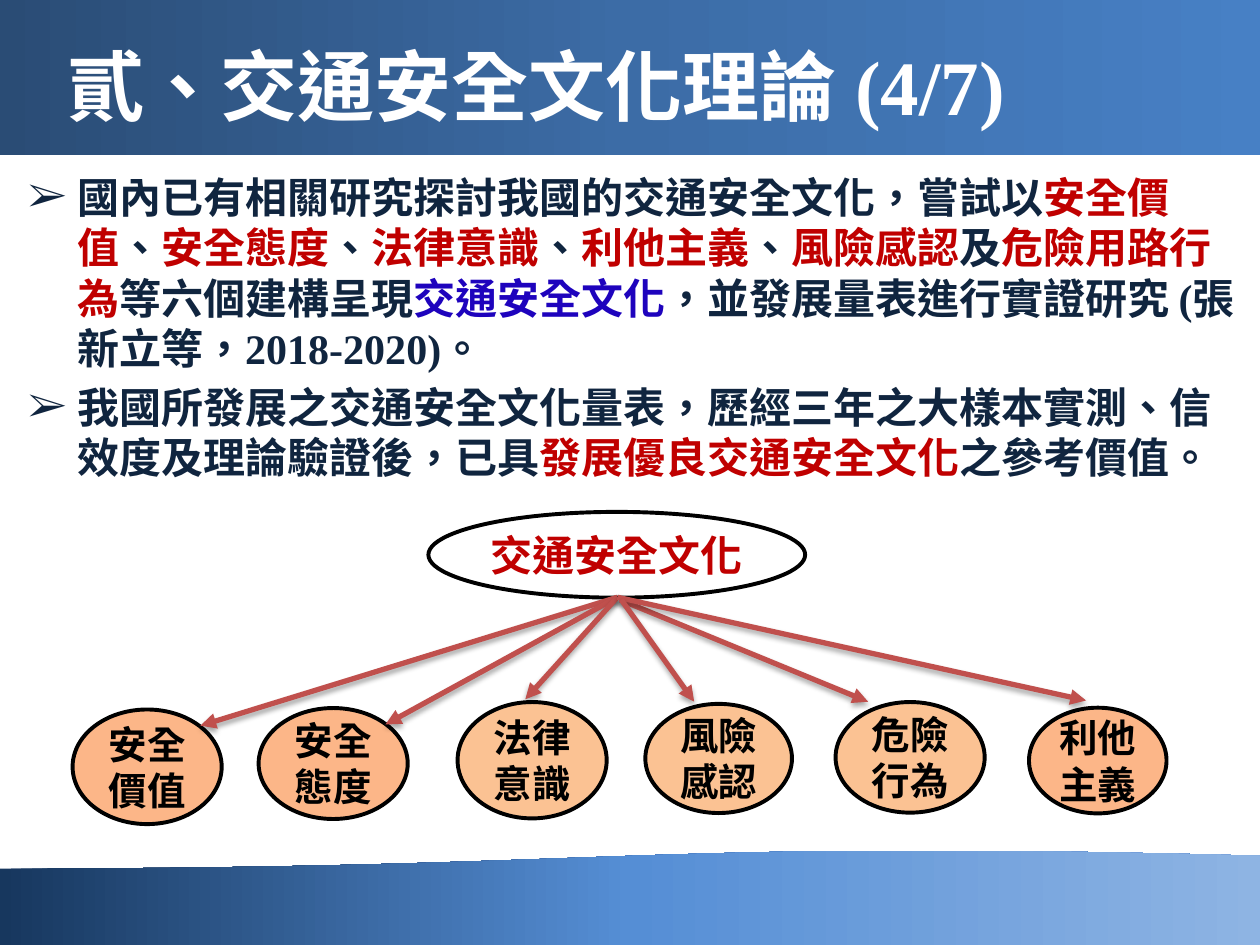
from typing import NamedTuple

from lxml.etree import SubElement
from pptx import Presentation
from pptx.dml.color import RGBColor
from pptx.enum.shapes import MSO_CONNECTOR, MSO_SHAPE
from pptx.enum.text import MSO_ANCHOR, PP_ALIGN
from pptx.oxml import parse_xml
from pptx.oxml.ns import nsdecls, qn
from pptx.util import Pt

FONT = "Times New Roman"
NAVY, RED, BLUE = "10253F", "C00000", "1E03BD"
PEACH, SAND = "FCB688", "FBC293"


class Oval(NamedTuple):
    """An ellipse with its place, label and look."""
    text: str
    left: float
    top: float
    width: float
    height: float
    fill: str
    size: float = 22
    color: str = "000000"


class Arrow(NamedTuple):
    """An arrow from the main idea to one factor."""
    x: float
    y: float
    to_x: float
    to_y: float


class Part(NamedTuple):
    """A stretch of text in one colour."""
    text: str
    color: str = NAVY


ROOT = Oval("交通安全文化", 244.8, 292.5, 215.3, 49, "FFFFFF", 24, RED)
FACTORS = [
    Oval("安全價值", 41.5, 405.4, 85.2, 65.5, PEACH),
    Oval("安全態度", 147.8, 404.6, 85.2, 63.4, PEACH),
    Oval("法律意識", 261.5, 401.2, 85.2, 66.5, SAND),
    Oval("風險感認", 368.8, 402.2, 83.8, 62.4, SAND),
    Oval("危險行為", 477.5, 401.2, 85.2, 63.2, SAND),
    Oval("利他主義", 588, 404.4, 78.6, 60.4, PEACH),
]
ARROWS = [
    Arrow(352.8, 341.3, 114.5, 414.7),
    Arrow(352.8, 341.3, 220.3, 414),
    Arrow(352.8, 341.3, 300.2, 399.6),
    Arrow(354.2, 342.7, 496.1, 401),
    Arrow(352.8, 341.3, 620.6, 400.3),
    Arrow(355, 342.7, 396.7, 401),
]
POINTS = [
    [
        Part("國內已有相關研究探討我國的交通安全文化，嘗試以"),
        Part("安全價值", RED), Part("、"),
        Part("安全態度", RED), Part("、"),
        Part("法律意識", RED), Part("、"),
        Part("利他主義", RED), Part("、"),
        Part("風險感認", RED), Part("及"),
        Part("危險用路行為", RED), Part("等六個建構呈現"),
        Part("交通安全文化", BLUE),
        Part("，並發展量表進行實證研究 (張新立等，2018-2020)。"),
    ],
    [
        Part("我國所發展之交通安全文化量表，歷經三年之大樣本實測、信效度及理論驗證後，已具"),
        Part("發展優良交通安全文化", RED), Part("之參考價值。"),
    ],
]


def tint(code: str) -> RGBColor:
    """Turn a hex string into a colour."""
    return RGBColor.from_string(code)


def style(run, size: float, color: str) -> None:
    """Set a run in the bold slide font, marked as Traditional Chinese."""
    font = run.font
    font.name, font.size, font.bold = FONT, Pt(size), True
    font.color.rgb = tint(color)
    run._r.get_or_add_rPr().set("lang", "zh-TW")


def add_band(slide, kind, top: float, height: float, stops: list[str], turn: int = 0) -> None:
    """Draw a full-width band with an even gradient."""
    band = slide.shapes.add_shape(kind, 0, Pt(top), Pt(720), Pt(height))
    band.rotation = turn
    band.shadow.inherit = False
    band.line.fill.background()
    step = 100000 // (len(stops) - 1)
    marks = "".join(f'<a:gs pos="{i * step}"><a:srgbClr val="{code}"/></a:gs>'
                    for i, code in enumerate(stops))
    grad = parse_xml(f'<a:gradFill {nsdecls("a")} rotWithShape="1"><a:gsLst>{marks}</a:gsLst>'
                     f'<a:lin ang="{turn * 60000}" scaled="0"/></a:gradFill>')
    band.element.spPr.find(qn("a:prstGeom")).addnext(grad)


def add_box(slide, left: float, top: float, width: float, height: float):
    """Add a wrapped text box and return its frame."""
    box = slide.shapes.add_textbox(Pt(left), Pt(top), Pt(width), Pt(height))
    box.text_frame.word_wrap = True
    return box.text_frame


def add_title(slide, text: str) -> None:
    """Write the slide title."""
    frame = add_box(slide, 31.2, 15.1, 680.4, 67)
    frame.vertical_anchor = MSO_ANCHOR.MIDDLE
    frame.text = text
    style(frame.paragraphs[0].runs[0], 44, "FFFFFF")


def add_points(slide, points: list[list[Part]]) -> None:
    """Write the bulleted points in their colours."""
    frame = add_box(slide, 9, 94.3, 711, 392.4)
    for i, parts in enumerate(points):
        para = frame.add_paragraph() if i else frame.paragraphs[0]
        if i:
            para.space_before = Pt(4.8)
        props = para._p.get_or_add_pPr()
        props.set("marL", str(Pt(28)))
        props.set("indent", str(-Pt(28)))
        props.set("hangingPunct", "0")
        SubElement(props, qn("a:buFont"), typeface=FONT)
        SubElement(props, qn("a:buChar"), char="➢")
        for part in parts:
            run = para.add_run()
            run.text = part.text
            style(run, 24, part.color)


def add_oval(slide, oval: Oval) -> None:
    """Draw a labelled ellipse."""
    shape = slide.shapes.add_shape(MSO_SHAPE.OVAL, Pt(oval.left), Pt(oval.top),
                                   Pt(oval.width), Pt(oval.height))
    shape.shadow.inherit = False
    shape.fill.solid()
    shape.fill.fore_color.rgb = tint(oval.fill)
    shape.line.color.rgb = tint("000000")
    shape.line.width = Pt(2.25)
    frame = shape.text_frame
    frame.word_wrap = True
    frame.margin_left = frame.margin_right = Pt(2.2)
    frame.margin_top = frame.margin_bottom = Pt(3.6)
    frame.vertical_anchor = MSO_ANCHOR.MIDDLE
    frame.text = oval.text
    para = frame.paragraphs[0]
    para.alignment = PP_ALIGN.CENTER
    style(para.runs[0], oval.size, oval.color)


def add_arrow(slide, arrow: Arrow) -> None:
    """Draw a red arrow with a soft shadow."""
    line = slide.shapes.add_connector(MSO_CONNECTOR.STRAIGHT, *map(Pt, arrow))
    line.line.color.rgb = tint("C0504D")
    line.line.width = Pt(3)
    props = line.element.spPr
    SubElement(props.find(qn("a:ln")), qn("a:tailEnd"), type="triangle")
    props.append(parse_xml(
        f'<a:effectLst {nsdecls("a")}><a:outerShdw blurRad="{Pt(3.1)}" dist="{Pt(1.8)}" '
        'dir="5400000" rotWithShape="0"><a:srgbClr val="000000"><a:alpha val="35000"/>'
        '</a:srgbClr></a:outerShdw></a:effectLst>'))


def main() -> None:
    """Build the slide and save it."""
    deck = Presentation()
    deck.slide_width, deck.slide_height = Pt(720), Pt(540)
    slide = deck.slides.add_slide(deck.slide_layouts[6])
    add_band(slide, MSO_SHAPE.FLOWCHART_DOCUMENT, 485.3, 55.4,
             ["17375E", "558ED5", "8EB4E3"], 180)
    add_band(slide, MSO_SHAPE.RECTANGLE, 0, 88.6, ["2A4C75", "3C6CA6", "4780C5"])
    add_title(slide, "貳、交通安全文化理論 (4/7)")
    add_points(slide, POINTS)
    for oval in [ROOT, *FACTORS]:
        add_oval(slide, oval)
    for arrow in ARROWS:
        add_arrow(slide, arrow)
    deck.save("out.pptx")


if __name__ == "__main__":
    main()
